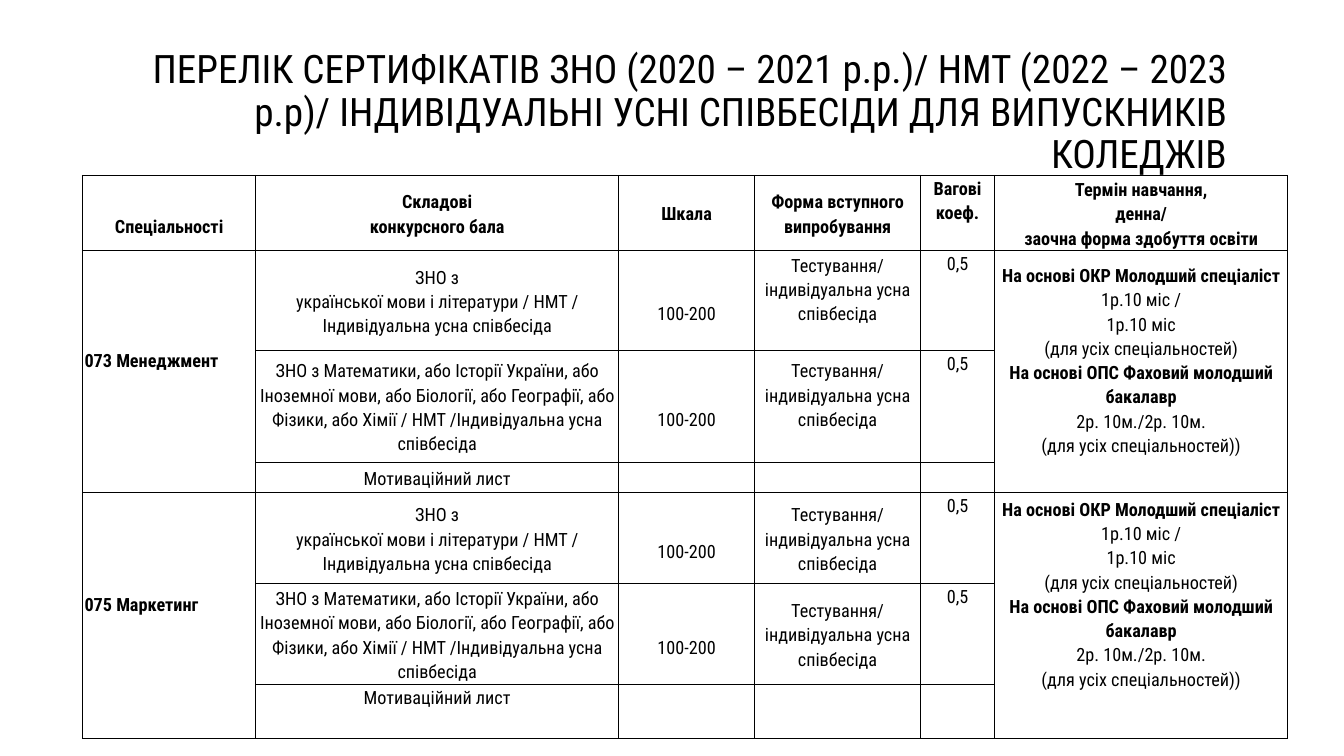
from dataclasses import dataclass

from lxml.etree import SubElement
from pptx import Presentation
from pptx.dml.color import RGBColor
from pptx.enum.text import MSO_ANCHOR, PP_ALIGN
from pptx.oxml.ns import qn
from pptx.table import Table, _Cell
from pptx.text.text import TextFrame
from pptx.util import Pt

FONT = "Roboto Condensed"
BLACK = "000000"
TEXT_LINE = 17.4
COLUMN_WIDTHS = [123.6, 259.3, 97.1, 118.6, 52.9, 209.3]
ROW_HEIGHTS = [52.15, 69.3, 80, 20.7, 65, 69.3, 38.6]


@dataclass(frozen=True)
class CellContent:
    lines: tuple[str, ...] = ("",)
    bold_lines: tuple[int, ...] = ()
    align: PP_ALIGN = PP_ALIGN.CENTER
    anchor: MSO_ANCHOR = MSO_ANCHOR.MIDDLE
    top: float = 0
    bottom: float = 0


@dataclass(frozen=True)
class Speciality:
    name: str
    first_row: int
    form_bottoms: tuple[float, float]
    duration_bottom: float
    letter_anchor: MSO_ANCHOR


EMPTY = CellContent()
LANGUAGE = CellContent(("ЗНО з", "української мови і літератури / НМТ / Індивідуальна усна співбесіда"))
SUBJECTS = CellContent((
    "ЗНО з Математики, або Історії України, або Іноземної мови, або Біології, "
    "або Географії, або Фізики, або Хімії / НМТ /Індивідуальна усна співбесіда",
))
SCALE = CellContent(("100-200",), top=TEXT_LINE)
WEIGHT = CellContent(("0,5",), anchor=MSO_ANCHOR.TOP)
DURATION_LINES = (
    "На основі ОКР Молодший спеціаліст",
    "1р.10 міс /",
    "1р.10 міс",
    "(для усіх спеціальностей)",
    "На основі ОПС Фаховий молодший бакалавр",
    "2р. 10м./2р. 10м.",
    "(для усіх спеціальностей))",
)
HEADERS = [
    CellContent(("Спеціальності",), (0,), top=TEXT_LINE),
    CellContent(("Складові", "конкурсного бала"), (0, 1)),
    CellContent(("Шкала",), (0,)),
    CellContent(("Форма вступного випробування",), (0,)),
    CellContent(("Вагові коеф.",), (0,), anchor=MSO_ANCHOR.TOP),
    CellContent(("Термін навчання,", "денна/", "заочна форма здобуття освіти"), (0, 1, 2)),
]
SPECIALITIES = [
    Speciality("073 Менеджмент", 1, (TEXT_LINE, TEXT_LINE), TEXT_LINE, MSO_ANCHOR.MIDDLE),
    Speciality("075 Маркетинг", 4, (0, 0), 31.6, MSO_ANCHOR.TOP),
]


def color(value: str) -> RGBColor:
    return RGBColor.from_string(value)


def write_paragraph(text_frame: TextFrame, text: str, *, first: bool, size: float,
                    align: PP_ALIGN, spacing: float, bold: bool = False) -> None:
    paragraph = text_frame.paragraphs[0] if first else text_frame.add_paragraph()
    paragraph.alignment = align
    paragraph.line_spacing = spacing
    run = paragraph.add_run()
    run.text = text
    run.font.name = FONT
    run.font.size = Pt(size)
    run.font.bold = bold
    run.font.color.rgb = color(BLACK)


def add_borders(cell: _Cell) -> None:
    """Outline the cell; border elements must precede its fill."""
    properties = cell._tc.get_or_add_tcPr()
    for index, side in enumerate(("lnL", "lnR", "lnT", "lnB")):
        border = SubElement(properties, qn(f"a:{side}"), w=str(Pt(1)))
        fill = SubElement(border, qn("a:solidFill"))
        SubElement(fill, qn("a:srgbClr"), val=BLACK)
        properties.insert(index, border)


def fill_cell(cell: _Cell, content: CellContent) -> None:
    cell.margin_left = cell.margin_right = Pt(1.4)
    cell.margin_top = Pt(content.top)
    cell.margin_bottom = Pt(content.bottom)
    cell.vertical_anchor = content.anchor
    cell.fill.background()
    add_borders(cell)
    for index, line in enumerate(content.lines):
        write_paragraph(cell.text_frame, line, first=index == 0, size=13,
                        align=content.align, spacing=1.15, bold=index in content.bold_lines)


def speciality_rows(speciality: Speciality) -> list[list[CellContent]]:
    name = CellContent((speciality.name,), (0,), align=PP_ALIGN.LEFT, bottom=TEXT_LINE)
    duration = CellContent(DURATION_LINES, (0, 4), bottom=speciality.duration_bottom)
    forms = [CellContent(("Тестування/ індивідуальна усна співбесіда",), bottom=bottom)
             for bottom in speciality.form_bottoms]
    letter = CellContent(("Мотиваційний лист",), anchor=speciality.letter_anchor)
    return [
        [name, LANGUAGE, SCALE, forms[0], WEIGHT, duration],
        [EMPTY, SUBJECTS, SCALE, forms[1], WEIGHT, EMPTY],
        [EMPTY, letter, EMPTY, EMPTY, EMPTY, EMPTY],
    ]


def fill_table(table: Table) -> None:
    table.first_row = table.horz_banding = False
    for column, width in zip(table.columns, COLUMN_WIDTHS):
        column.width = Pt(width)
    for row, height in zip(table.rows, ROW_HEIGHTS):
        row.height = Pt(height)
    contents = [HEADERS]
    for speciality in SPECIALITIES:
        contents += speciality_rows(speciality)
    for row, row_contents in zip(table.rows, contents):
        for cell, content in zip(row.cells, row_contents):
            fill_cell(cell, content)
    for speciality in SPECIALITIES:
        for column in (0, len(COLUMN_WIDTHS) - 1):
            last = table.cell(speciality.first_row + 2, column)
            table.cell(speciality.first_row, column).merge(last)


def main() -> None:
    presentation = Presentation()
    presentation.slide_width, presentation.slide_height = Pt(960), Pt(540)
    slide = presentation.slides.add_slide(presentation.slide_layouts[6])

    title = slide.shapes.add_textbox(Pt(55.4), Pt(28.8), Pt(828), Pt(104.4)).text_frame
    title.word_wrap = True
    title.vertical_anchor = MSO_ANCHOR.MIDDLE
    write_paragraph(
        title,
        "ПЕРЕЛІК СЕРТИФІКАТІВ ЗНО (2020 – 2021 р.р.)/ НМТ (2022 – 2023 р.р)/ "
        "ІНДИВІДУАЛЬНІ УСНІ СПІВБЕСІДИ ДЛЯ ВИПУСКНИКІВ КОЛЕДЖІВ",
        first=True, size=28, align=PP_ALIGN.RIGHT, spacing=0.9,
    )

    frame = slide.shapes.add_table(
        len(ROW_HEIGHTS), len(COLUMN_WIDTHS),
        Pt(59), Pt(125.3), Pt(sum(COLUMN_WIDTHS)), Pt(sum(ROW_HEIGHTS)),
    )
    fill_table(frame.table)
    presentation.save("out.pptx")


if __name__ == "__main__":
    main()
